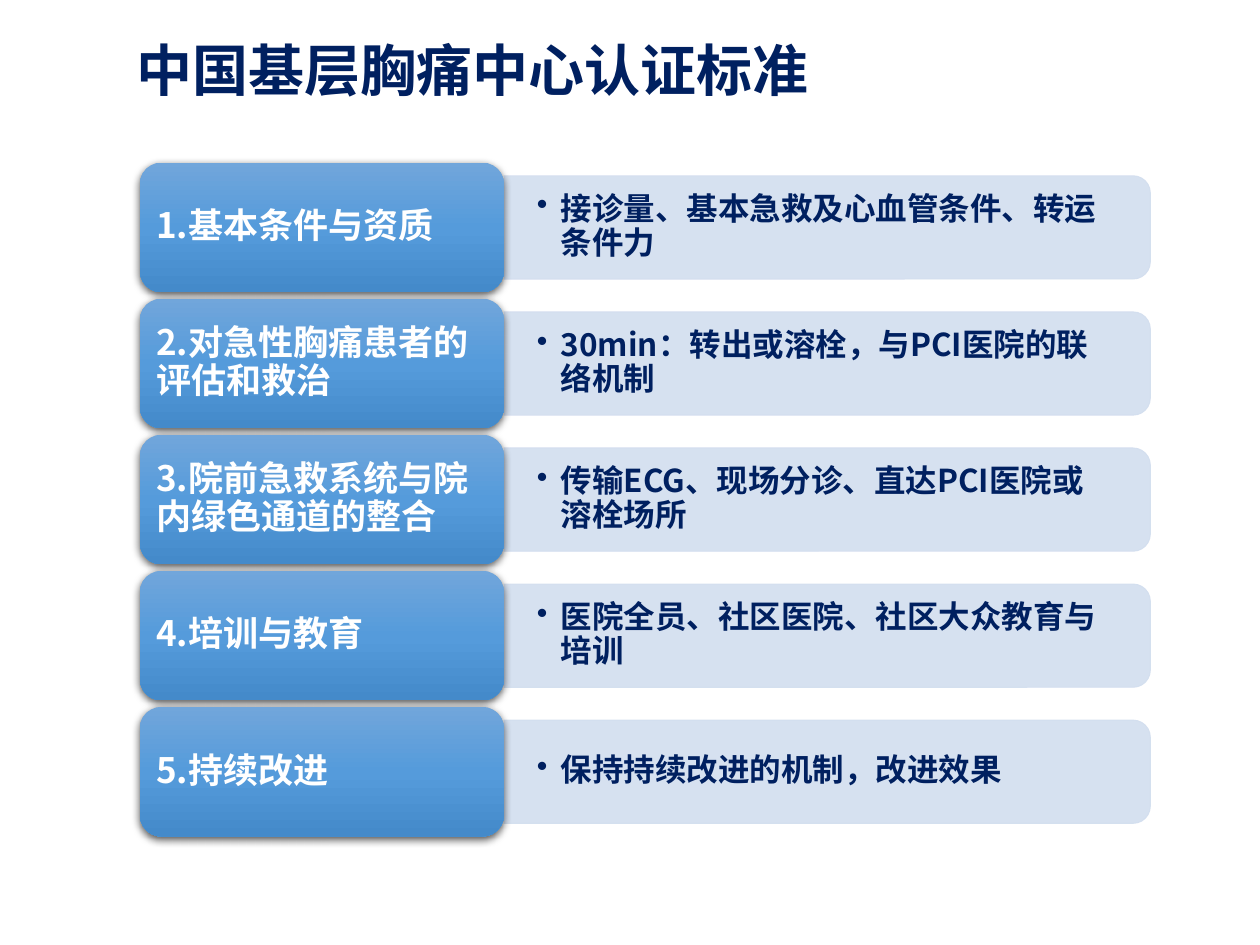
from copy import deepcopy

from lxml import etree
from pptx import Presentation
from pptx.dml.color import RGBColor
from pptx.enum import shapes, text
from pptx.oxml import ns
from pptx.util import Inches, Pt

FONT = "Noto Sans CJK SC"
NAVY = RGBColor(0x00, 0x20, 0x60)
WHITE = RGBColor(0xFF, 0xFF, 0xFF)
PALE = RGBColor(0xD2, 0xDE, 0xEF)
BLUES = [RGBColor(0x71, 0xA6, 0xDB), RGBColor(0x55, 0x9B, 0xDB),
         RGBColor(0x44, 0x8A, 0xCA)]

TOP, STEP = 1.29, 1.08
CARD_X, CARD_W, CARD_H = 1.11, 2.89, 1.03
BAR_W, BAR_H = 5.13, 0.82
ROWS = [
    ("1.基本条件与资质", "接诊量、基本急救及心血管条件、转运条件力"),
    ("2.对急性胸痛患者的评估和救治", "30min：转出或溶栓，与PCI医院的联络机制"),
    ("3.院前急救系统与院内绿色通道的整合", "传输ECG、现场分诊、直达PCI医院或溶栓场所"),
    ("4.培训与教育", "医院全员、社区医院、社区大众教育与培训"),
    ("5.持续改进", "保持持续改进的机制，改进效果"),
]


def add_tag(node, tag, **attrs):
    return etree.SubElement(node, ns.qn(tag), **attrs)


def add_text(slide, words, box, pad, size, color, after=0, bullet=False):
    frame = slide.shapes.add_textbox(*map(Inches, box)).text_frame
    frame.word_wrap = True
    frame.vertical_anchor = text.MSO_ANCHOR.MIDDLE
    frame.margin_left = frame.margin_right = Inches(pad[0])
    frame.margin_top = frame.margin_bottom = Inches(pad[1])
    frame.text = words
    para = frame.paragraphs[0]
    para.line_spacing = 0.9
    para.space_after = Pt(after)
    if bullet:
        props = para._p.get_or_add_pPr()
        props.set("marL", str(Inches(0.19)))
        props.set("indent", str(Inches(-0.19)))
        add_tag(props, "a:buChar", char="•")
    run = para.runs[0]
    run.font.name = FONT
    run.font.size = Pt(size)
    run.font.bold = True
    run.font.color.rgb = color
    add_tag(run._r.get_or_add_rPr(), "a:ea", typeface=FONT)
    return para


def add_bar(slide, mid):
    left = CARD_X + CARD_W + (BAR_W - BAR_H) / 2
    bar = slide.shapes.add_shape(
        shapes.MSO_SHAPE.ROUND_2_SAME_RECTANGLE, Inches(left),
        Inches(mid - BAR_W / 2), Inches(BAR_H), Inches(BAR_W))
    bar.rotation = 90
    bar.shadow.inherit = False
    bar.fill.solid()
    bar.fill.fore_color.rgb = PALE
    bar.line.color.rgb = PALE
    bar.line.width = Pt(0.5)
    for tint in bar._element.spPr.iter(ns.qn("a:srgbClr")):
        add_tag(tint, "a:alpha", val="90000")


def add_card(slide, top):
    card = slide.shapes.add_shape(
        shapes.MSO_SHAPE.ROUNDED_RECTANGLE, Inches(CARD_X), Inches(top),
        Inches(CARD_W), Inches(CARD_H))
    card.line.fill.background()
    card.fill.gradient()
    card.fill.gradient_angle = 270
    props = card._element.spPr
    stops = props.find(".//" + ns.qn("a:gsLst"))
    stops.append(deepcopy(stops[-1]))
    for i, (stop, blue) in enumerate(zip(card.fill.gradient_stops, BLUES)):
        stop.position = i / 2
        stop.color.rgb = blue
    card.shadow.inherit = False
    shade = add_tag(props.find(ns.qn("a:effectLst")), "a:outerShdw",
                    blurRad=str(Pt(4.5)), dist=str(Pt(1.5)),
                    dir="5400000", algn="ctr", rotWithShape="0")
    black = add_tag(shade, "a:srgbClr", val="000000")
    add_tag(black, "a:alpha", val="63000")


def add_row(slide, top, label, note):
    mid = top + CARD_H / 2
    add_bar(slide, mid)
    add_text(slide, note, (3.99, mid - 0.37, 5.09, 0.74), (0.27, 0.14),
             18, NAVY, after=2.7, bullet=True)
    add_card(slide, top)
    add_text(slide, label, (CARD_X + 0.05, top + 0.05, 2.79, 0.93),
             (0.08, 0.04), 20, WHITE, after=7)


def main():
    deck = Presentation()
    deck.slide_width, deck.slide_height = Inches(10), Inches(7.5)
    slide = deck.slides.add_slide(deck.slide_layouts[6])
    title = add_text(slide, "中国基层胸痛中心认证标准",
                     (0.97, 0.02, 5.56, 1.12), (0.1, 0.05), 32, NAVY)
    title.alignment = text.PP_ALIGN.CENTER
    for i, (label, note) in enumerate(ROWS):
        add_row(slide, TOP + i * STEP, label, note)
    deck.save("out.pptx")


if __name__ == "__main__":
    main()
